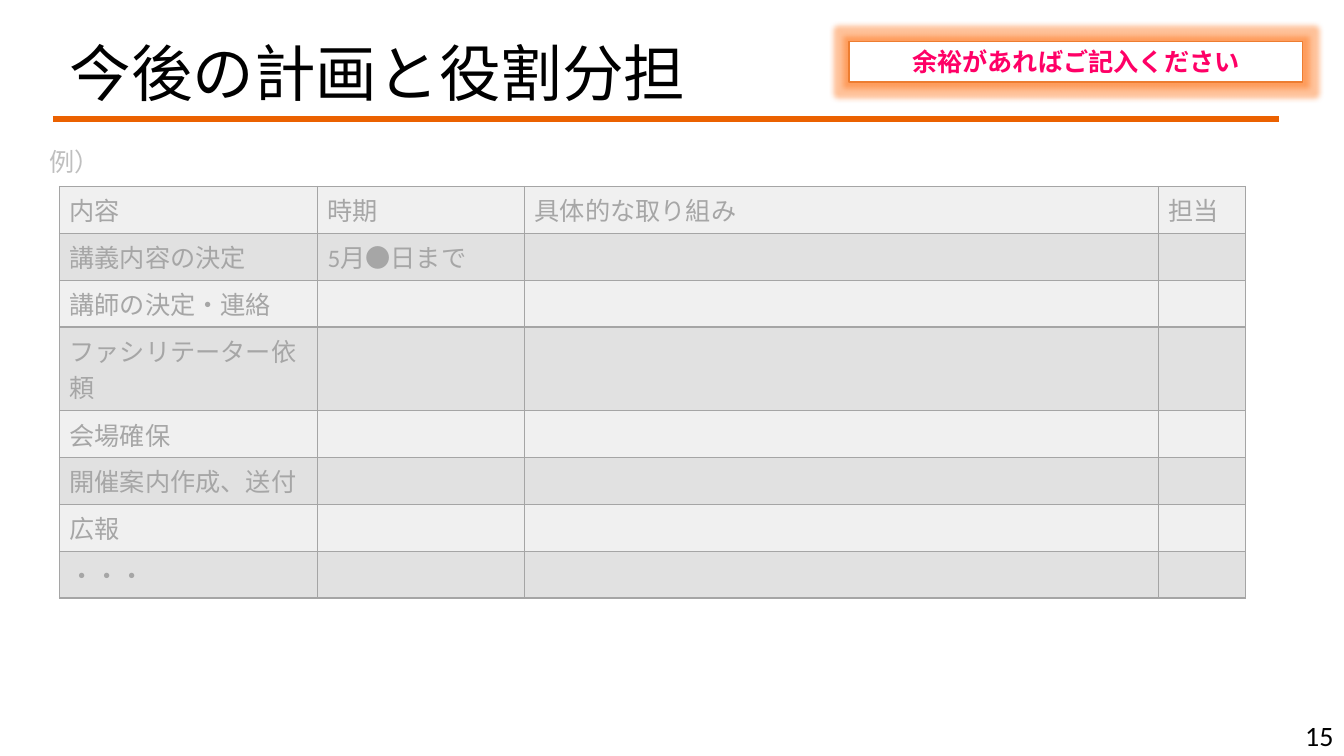
from lxml import etree
from pptx import Presentation
from pptx.dml.color import RGBColor
from pptx.enum.shapes import MSO_CONNECTOR, MSO_SHAPE
from pptx.enum.text import MSO_ANCHOR, PP_ALIGN
from pptx.oxml.ns import qn
from pptx.util import Cm, Pt

STRAIGHT = MSO_CONNECTOR.STRAIGHT
RECT = MSO_SHAPE.RECTANGLE
MIDDLE = MSO_ANCHOR.MIDDLE
LEFT, CENTER, RIGHT = PP_ALIGN.LEFT, PP_ALIGN.CENTER, PP_ALIGN.RIGHT

COLORS = {
    "text": "000000", "rule": "EB6100", "example": "BFBFBF",
    "cell": "A6A6A6", "border": "A5A5A5", "light": "F0F0F0",
    "dark": "E1E1E1", "white": "FFFFFF", "frame": "ED7D31",
    "glow": "FF6600", "notice": "FF0066",
}
LATIN = "Calibri"
JAPANESE = "Noto Sans CJK JP"

COLUMNS = [6.5, 5.22, 15.98, 2.19]
ROW_HEIGHT = 1.18
WRAPPED_HEIGHT = 2.11
ROWS = [
    (ROW_HEIGHT, ["内容", "時期", "具体的な取り組み", "担当"]),
    (ROW_HEIGHT, ["講義内容の決定", "5月●日まで"]),
    (ROW_HEIGHT, ["講師の決定・連絡"]),
    (WRAPPED_HEIGHT, ["ファシリテーター依頼"]),
    (ROW_HEIGHT, ["会場確保"]),
    (ROW_HEIGHT, ["開催案内作成、送付"]),
    (ROW_HEIGHT, ["広報"]),
    (ROW_HEIGHT, ["・・・"]),
]


def rgb(name):
    return RGBColor.from_string(COLORS[name])


def write(tf, text, size, color, font=LATIN, align=LEFT, bold=False):
    p = tf.paragraphs[0]
    p.alignment = align
    r = p.add_run()
    r.text = text
    r.font.size = Pt(size)
    r.font.bold = bold
    r.font.name = font
    r.font.color.rgb = rgb(color)
    if font == JAPANESE:
        ea = etree.SubElement(r.font._element, qn("a:ea"))
        ea.set("typeface", font)
    return p


def add_label(slide, box, text, size, color, align=LEFT):
    sp = slide.shapes.add_textbox(*map(Cm, box))
    tf = sp.text_frame
    tf.word_wrap = True
    tf.vertical_anchor = MIDDLE
    write(tf, text, size, color, align=align)


def add_heading(slide, box):
    left, top, width, height = box
    rule_y = Cm(top + 2.9)
    rule = slide.shapes.add_connector(
        STRAIGHT, Cm(left - 0.17), rule_y, Cm(left + 30.72), rule_y)
    rule.line.color.rgb = rgb("rule")
    rule.line.width = Pt(4)
    etree.SubElement(rule._element.spPr, qn("a:effectLst"))

    title = slide.shapes.title
    title.left, title.top = Cm(left), Cm(top)
    title.width, title.height = Cm(width), Cm(height)
    tf = title.text_frame
    tf.word_wrap = True
    tf.vertical_anchor = MIDDLE
    p = write(tf, "今後の計画と役割分担", 44, "text", JAPANESE)
    p.line_spacing = 0.9


def add_notice(slide, box):
    sp = slide.shapes.add_shape(RECT, *map(Cm, box))
    sp.shadow.inherit = False
    sp.fill.solid()
    sp.fill.fore_color.rgb = rgb("white")
    sp.line.color.rgb = rgb("frame")
    sp.line.width = Pt(1)
    effects = sp._element.spPr.find(qn("a:effectLst"))
    glow = etree.SubElement(effects, qn("a:glow"), rad=str(Cm(0.28)))
    color = etree.SubElement(glow, qn("a:srgbClr"), val=COLORS["glow"])
    etree.SubElement(color, qn("a:alpha"), val="40000")
    tf = sp.text_frame
    tf.word_wrap = True
    tf.vertical_anchor = MIDDLE
    write(tf, "余裕があればご記入ください", 18, "notice", JAPANESE, CENTER, True)


def add_borders(cell):
    tc_pr = cell._tc.get_or_add_tcPr()
    for i, side in enumerate(("a:lnL", "a:lnR", "a:lnT", "a:lnB")):
        ln = etree.Element(qn(side), w=str(Pt(1)))
        fill = etree.SubElement(ln, qn("a:solidFill"))
        etree.SubElement(fill, qn("a:srgbClr"), val=COLORS["border"])
        tc_pr.insert(i, ln)


def add_plan_table(slide, left, top):
    height = sum(row_height for row_height, _ in ROWS)
    frame = slide.shapes.add_table(
        len(ROWS), len(COLUMNS), Cm(left), Cm(top),
        Cm(sum(COLUMNS)), Cm(height))
    table = frame.table
    for column, width in zip(table.columns, COLUMNS):
        column.width = Cm(width)
    for i, (row_height, texts) in enumerate(ROWS):
        table.rows[i].height = Cm(row_height)
        for j, cell in enumerate(table.rows[i].cells):
            cell.fill.solid()
            cell.fill.fore_color.rgb = rgb("dark" if i % 2 else "light")
            add_borders(cell)
            if j < len(texts):
                write(cell.text_frame, texts[j], 18, "cell")


def main():
    prs = Presentation()
    prs.slide_width, prs.slide_height = Cm(33.87), Cm(19.05)
    slide = prs.slides.add_slide(prs.slide_layouts[5])
    add_heading(slide, (1.5, 0.1, 29.21, 3.68))
    add_label(slide, (26.24, 18.03, 7.62, 1.02), "15", 20, "text", RIGHT)
    add_plan_table(slide, 1.5, 4.7)
    add_label(slide, (0.99, 3.56, 26.11, 1.02), "例）", 18, "example")
    add_notice(slide, (21.4, 1.05, 11.43, 1.02))
    prs.save("out.pptx")


if __name__ == "__main__":
    main()
